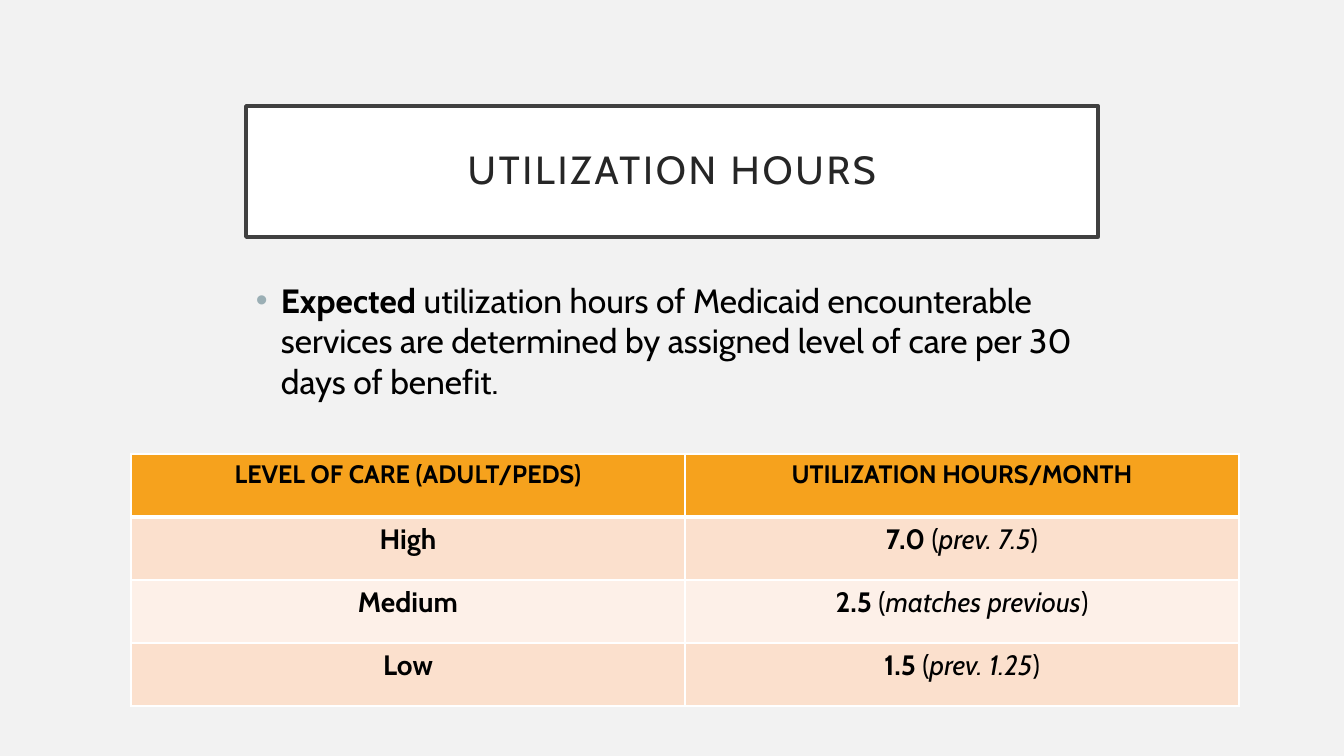
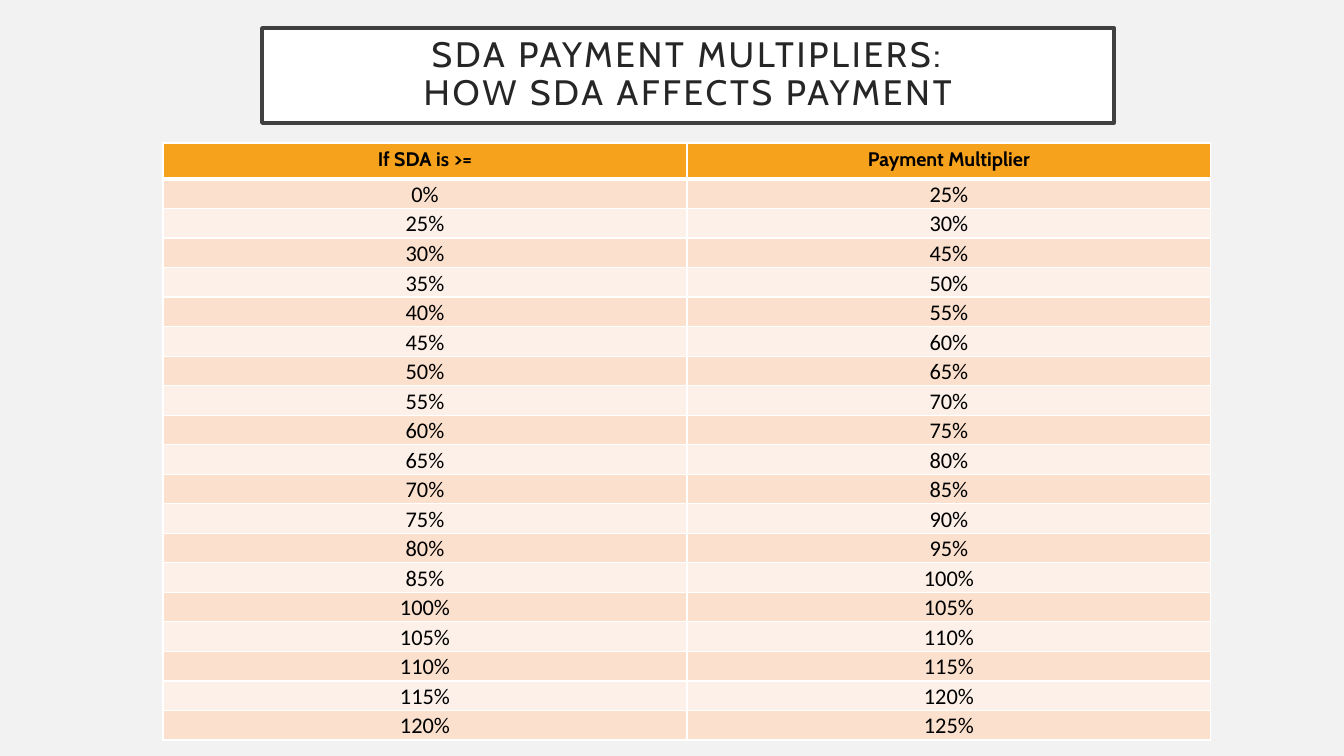
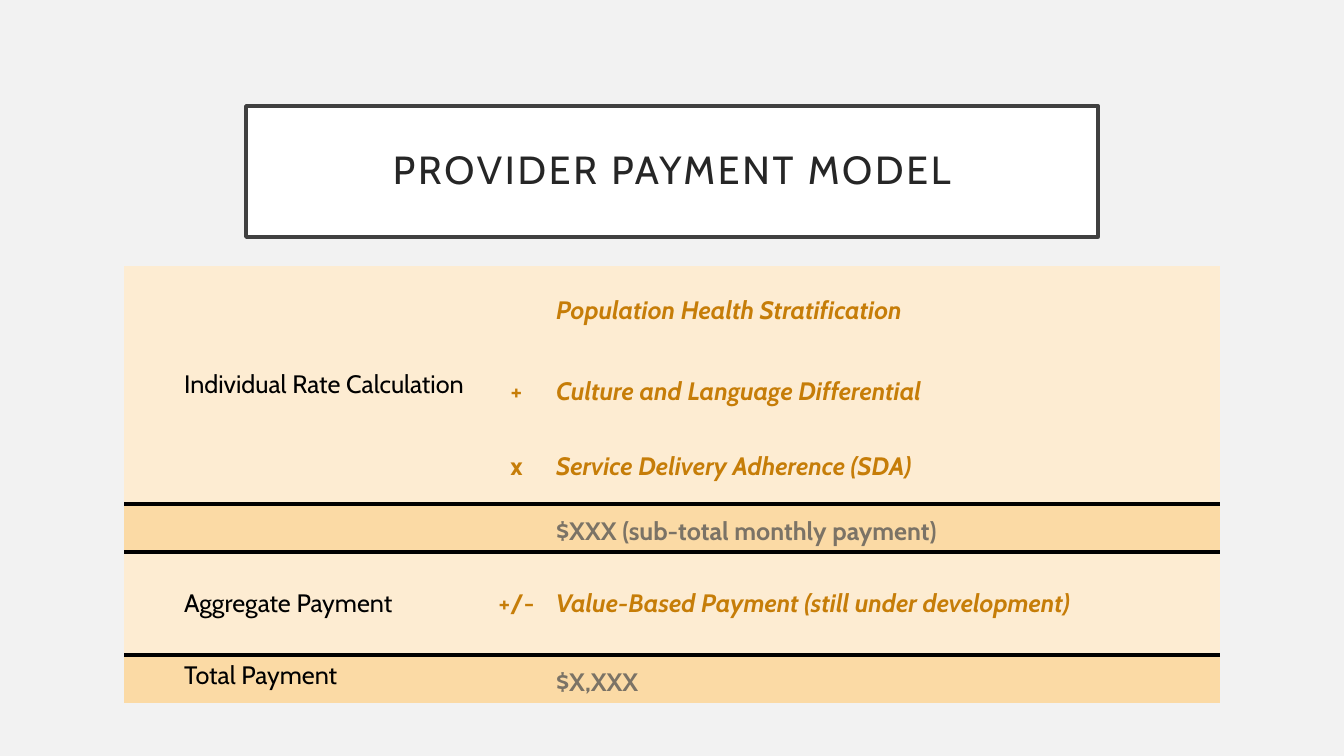
from lxml.etree import SubElement
from pptx import Presentation
from pptx.dml.color import RGBColor
from pptx.enum.text import MSO_ANCHOR as ANCHOR, MSO_AUTO_SIZE as AUTO_SIZE, PP_ALIGN as ALIGN
from pptx.oxml.ns import qn
from pptx.util import Pt

PX = 914400 / 100.8

PAPER = RGBColor(0xF2, 0xF2, 0xF2)
WHITE = RGBColor(0xFF, 0xFF, 0xFF)
BLACK = RGBColor(0x00, 0x00, 0x00)
FRAME = RGBColor(0x40, 0x40, 0x40)
TITLE = RGBColor(0x26, 0x26, 0x26)
BULLET = RGBColor(0x9B, 0xAF, 0xB5)
ORANGE = RGBColor(0xF6, 0xA2, 0x1D)
PEACH = RGBColor(0xFB, 0xE0, 0xCD)
PALE_PEACH = RGBColor(0xFD, 0xF0, 0xE8)
CREAM = RGBColor(0xFD, 0xEC, 0xD2)
SAND = RGBColor(0xFB, 0xDA, 0xA5)
AMBER = RGBColor(0xC6, 0x7D, 0x08)
GREY = RGBColor(0x7B, 0x73, 0x66)

NO_STYLE = "{2D5ABB26-0587-4C30-8999-92F81FD0307C}"


def px(length):
    return round(length * PX)


def write(frame, text, size=18, font="Cabin", color=BLACK, bold=False, italic=False,
          align=ALIGN.LEFT, line=None, tracking=None):
    """Text is a string, or a list of (text, bold, italic) parts."""
    paragraph = frame.paragraphs[0]
    paragraph.alignment = align
    if line:
        paragraph.line_spacing = line
    parts = [(text, bold, italic)] if isinstance(text, str) else text
    for words, strong, slanted in parts:
        for i, row in enumerate(words.split("\n")):
            if i:
                paragraph.add_line_break()
            run = paragraph.add_run()
            run.text = row
            run.font.size, run.font.name = Pt(size), font
            run.font.bold, run.font.italic = strong, slanted
            run.font.color.rgb = color
            if tracking:
                run.font._element.set("spc", str(tracking * 100))
    return paragraph


def add_grid(slide, left, top, widths, heights, fills, rules, rule_color, side=0):
    """One fill per row; rules holds the line width above each row and below the last."""
    frame = slide.shapes.add_table(len(heights), len(widths), px(left), px(top),
                                   px(sum(widths)), px(sum(heights)))
    table = frame.table
    table.first_row = table.horz_banding = False
    table._tbl.tblPr.find(qn("a:tableStyleId")).text = NO_STYLE
    for column, width in zip(table.columns, widths):
        column.width = px(width)
    for r, height in enumerate(heights):
        table.rows[r].height = px(height)
        for cell in table.rows[r].cells:
            props = cell._tc.get_or_add_tcPr()
            for edge, points in (("lnL", side), ("lnR", side),
                                 ("lnT", rules[r]), ("lnB", rules[r + 1])):
                if points:
                    ln = SubElement(props, qn("a:" + edge), w=str(Pt(points)))
                    paint = SubElement(ln, qn("a:solidFill"))
                    SubElement(paint, qn("a:srgbClr"), val=str(rule_color))
            cell.fill.solid()
            cell.fill.fore_color.rgb = fills[r]
    return table


prs = Presentation()
prs.slide_width, prs.slide_height = px(1344), px(756)
prs.slide_master.background.fill.solid()
prs.slide_master.background.fill.fore_color.rgb = PAPER

# Slides with their framed titles
titles = [
    ("UTILIZATION HOURS", 246, 106, 131, 28),
    ("SDA PAYMENT MULTIPLIERS:\nHOW SDA AFFECTS PAYMENT", 262, 28, 95, 25.2),
    ("PROVIDER PAYMENT MODEL", 246, 106, 131, 28),
]
slides = []
for heading, left, top, height, size in titles:
    slide = prs.slides.add_slide(prs.slide_layouts[5])
    title = slide.shapes.title
    title.left, title.top, title.width, title.height = px(left), px(top), px(852), px(height)
    title.fill.solid()
    title.fill.fore_color.rgb = WHITE
    title.line.color.rgb, title.line.width = FRAME, Pt(2.5)
    frame = title.text_frame
    frame.word_wrap, frame.auto_size = True, AUTO_SIZE.NONE
    frame.vertical_anchor = ANCHOR.MIDDLE
    frame.margin_left = frame.margin_right = frame.margin_top = frame.margin_bottom = px(20)
    write(frame, heading, size=size, color=TITLE, align=ALIGN.CENTER, line=0.9, tracking=2)
    slides.append(slide)
hours_slide, multiplier_slide, model_slide = slides

# Utilization hours: bulleted statement
statement = hours_slide.shapes.add_textbox(px(246), px(275), px(852), px(358)).text_frame
statement.word_wrap = True
bulleted = write(statement, [
    ("Expected", True, False),
    (" utilization hours of Medicaid encounterable services are determined by assigned "
     "level of care per 30 days of benefit.", False, False)], size=24)
bulleted.space_before = Pt(10)
bullet_props = bulleted._p.get_or_add_pPr()
bullet_props.set("marL", str(px(25)))
bullet_props.set("indent", str(-px(25)))
bullet_color = SubElement(bullet_props, qn("a:buClr"))
SubElement(bullet_color, qn("a:srgbClr"), val=str(BULLET))
SubElement(bullet_props, qn("a:buFont"), typeface="Arial")
SubElement(bullet_props, qn("a:buChar"), char="•")

# Utilization hours: table by level of care
levels = [("High", "7.0", "prev. 7.5"), ("Medium", "2.5", "matches previous"),
          ("Low", "1.5", "prev. 1.25")]
hours = add_grid(hours_slide, 131, 454, [554, 554], [63] * 4,
                 [ORANGE, PEACH, PALE_PEACH, PEACH], [1, 3, 1, 1, 1], WHITE, side=1)
for c, label in enumerate(["LEVEL OF CARE (ADULT/PEDS)", "UTILIZATION HOURS/MONTH"]):
    write(hours.cell(0, c).text_frame, label, bold=True, align=ALIGN.CENTER)
for r, (level, value, note) in enumerate(levels, 1):
    write(hours.cell(r, 0).text_frame, level, size=20, bold=True, align=ALIGN.CENTER)
    write(hours.cell(r, 1).text_frame,
          [(value, True, False), (" (", False, False), (note, False, True), (")", False, False)],
          size=20, align=ALIGN.CENTER)

# Payment multipliers
thresholds = [0, *range(25, 90, 5), *range(100, 125, 5)]
multipliers = [25, 30, *range(45, 130, 5)]
count = len(thresholds)
header_height, table_height = 36, 597
row_height = (table_height - header_height) / count
bands = [PALE_PEACH if i % 2 else PEACH for i in range(count)]
payments = add_grid(multiplier_slide, 163, 143, [524, 524],
                    [header_height] + [row_height] * count,
                    [ORANGE] + bands, [1, 3] + [1] * count, WHITE, side=1)
for c, label in enumerate(["If SDA is >=", "Payment Multiplier"]):
    write(payments.cell(0, c).text_frame, label, size=14, bold=True, align=ALIGN.CENTER)
for r, pair in enumerate(zip(thresholds, multipliers), 1):
    for c, percent in enumerate(pair):
        cell = payments.cell(r, c)
        cell.vertical_anchor = ANCHOR.BOTTOM
        cell.margin_left = cell.margin_right = px(7)
        cell.margin_top = cell.margin_bottom = 0
        write(cell.text_frame, f"{percent}%", size=16, font="Calibri",
              align=ALIGN.CENTER, line=1.07)

# Provider payment model
model = add_grid(model_slide, 124, 266, [363, 59, 674], [89, 74, 75, 48, 103, 48],
                 [CREAM, CREAM, CREAM, SAND, CREAM, SAND], [0, 0, 0, 3, 3, 3, 0], BLACK)
model.cell(0, 0).merge(model.cell(2, 0))
stages = [(0, "Individual Rate Calculation", ANCHOR.MIDDLE),
          (4, "Aggregate Payment", ANCHOR.MIDDLE),
          (5, "Total Payment", ANCHOR.TOP)]
for r, stage, anchor in stages:
    cell = model.cell(r, 0)
    cell.vertical_anchor = anchor
    indented = write(cell.text_frame, stage)
    indented._p.get_or_add_pPr().set("marL", str(px(50)))
factors = [(0, "", "Population Health Stratification"),
           (1, "+", "Culture and Language Differential"),
           (2, "x", "Service Delivery Adherence (SDA)"),
           (4, "+/-", "Value-Based Payment (still under development)")]
for r, sign, factor in factors:
    sign_cell, factor_cell = model.cell(r, 1), model.cell(r, 2)
    sign_cell.vertical_anchor = factor_cell.vertical_anchor = ANCHOR.MIDDLE
    if sign:
        write(sign_cell.text_frame, sign, color=AMBER, bold=True, align=ALIGN.CENTER)
    write(factor_cell.text_frame, factor, color=AMBER, bold=True, italic=True)
for r, amount in [(3, "$XXX (sub-total monthly payment)"), (5, "$X,XXX")]:
    cell = model.cell(r, 2)
    cell.vertical_anchor = ANCHOR.BOTTOM
    write(cell.text_frame, amount, color=GREY, bold=True)

prs.save("out.pptx")
